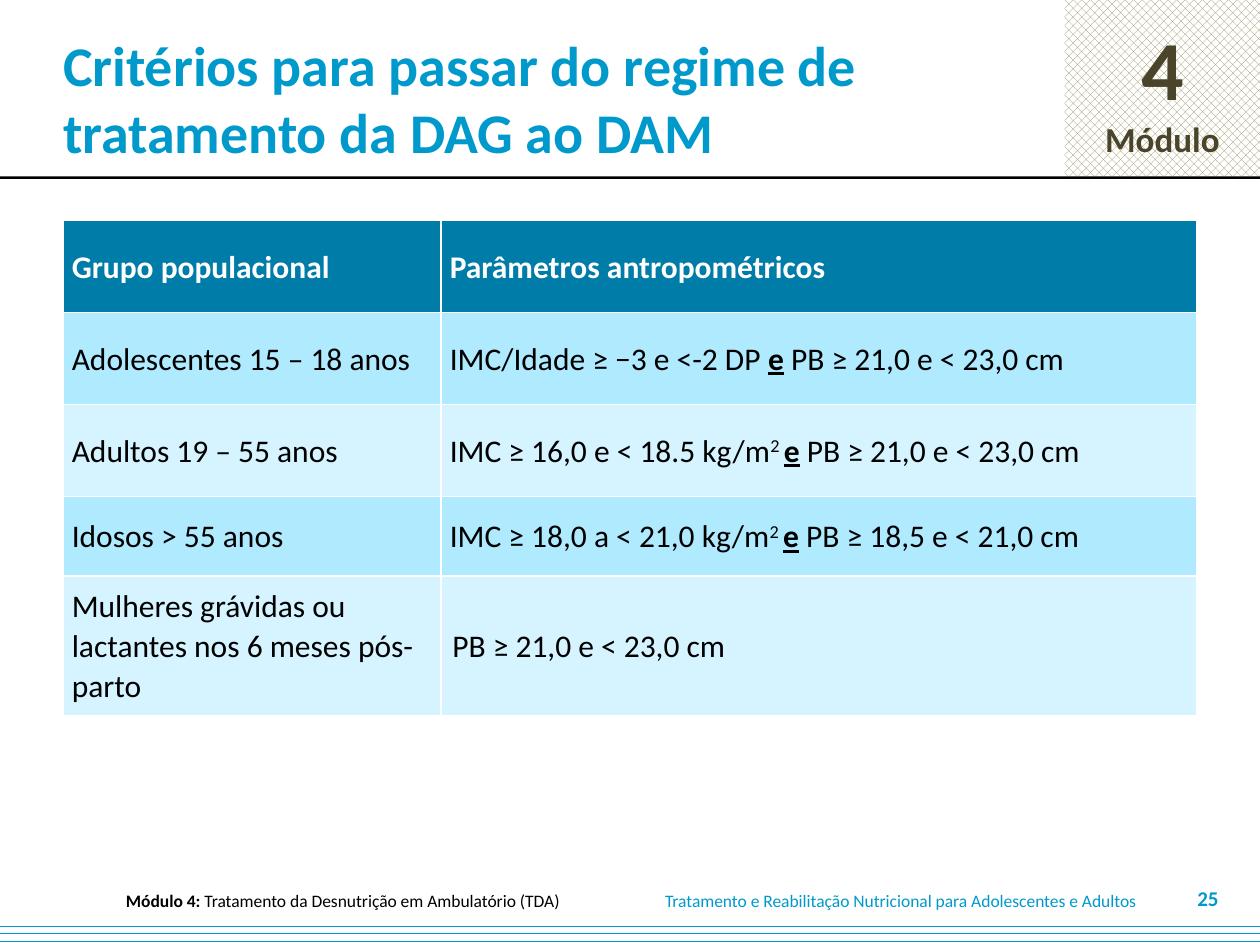
from lxml.etree import SubElement
from pptx import Presentation
from pptx.dml.color import RGBColor
from pptx.enum.dml import MSO_PATTERN
from pptx.enum.shapes import MSO_SHAPE
from pptx.enum.text import MSO_ANCHOR, MSO_AUTO_SIZE, PP_ALIGN
from pptx.oxml.ns import qn
from pptx.util import Inches, Pt

BLUE = RGBColor(0x00, 0x99, 0xCC)
DEEP = RGBColor(0x00, 0x7C, 0xA8)
SKY = RGBColor(0xAF, 0xEA, 0xFF)
PALE = RGBColor(0xD5, 0xF4, 0xFF)
TAN = RGBColor(0x94, 0x8A, 0x54)
BROWN = RGBColor(0x4A, 0x45, 0x2A)
BLACK = RGBColor(0, 0, 0)
WHITE = RGBColor(255, 255, 255)

LEFT, MID, RIGHT, JUST = (PP_ALIGN.LEFT, PP_ALIGN.CENTER,
                          PP_ALIGN.RIGHT, PP_ALIGN.JUSTIFY)
AND = ("e", {"bold": True, "underline": True})
SQUARE = ("2 ", {"raised": True})

ROWS = [
    (0.73, ["Grupo populacional"], ["Parâmetros antropométricos"]),
    (0.73, ["Adolescentes 15 – 18 anos"],
     ["IMC/Idade ≥ −3 e <-2 DP ", AND, " PB ≥ 21,0 e < 23,0 cm"]),
    (0.73, ["Adultos 19 – 55 anos"],
     ["IMC ≥ 16,0 e < 18.5 kg/m", SQUARE, AND, " PB ≥ 21,0 e < 23,0 cm"]),
    (0.63, ["Idosos > 55 anos"],
     ["IMC ≥ 18,0 a < 21,0 kg/m", SQUARE, AND, " PB ≥ 18,5 e < 21,0 cm"]),
    (1.11, ["Mulheres grávidas ou lactantes nos 6 meses pós-parto"],
     ["PB ≥ 21,0 e < 23,0 cm"]),
]


class Deck:
    def __init__(self, font):
        self.font = font
        self.prs = Presentation()
        self.prs.slide_width, self.prs.slide_height = Inches(10), Inches(7.5)
        self.slide = self.prs.slides.add_slide(self.prs.slide_layouts[5])

    def text(self, para, parts, size, color, align=LEFT, bold=False):
        """Fill a paragraph; a part is a text or a (text, format) pair."""
        para.alignment = align
        for part in parts:
            words, extra = (part, {}) if isinstance(part, str) else part
            run = para.add_run()
            run.text = words
            look = {"name": self.font, "size": Pt(size), "bold": bold} | extra
            if look.pop("raised", False):
                run._r.get_or_add_rPr().set("baseline", "30000")
            for key, value in look.items():
                setattr(run.font, key, value)
            run.font.color.rgb = color

    def rect(self, box, color, pattern=None):
        shape = self.slide.shapes.add_shape(
            MSO_SHAPE.RECTANGLE, *map(Inches, box))
        shape.shadow.inherit = False
        shape.line.fill.background()
        if pattern is None:
            shape.fill.solid()
            shape.fill.fore_color.rgb = color
        else:
            shape.fill.patterned()
            shape.fill.pattern = pattern
            shape.fill.fore_color.rgb = color
            shape.fill.back_color.rgb = WHITE
        return shape

    def badge(self, box, lines):
        frame = self.rect(box, TAN, MSO_PATTERN.PERCENT_50).text_frame
        frame.vertical_anchor = MSO_ANCHOR.MIDDLE
        for i, (words, size) in enumerate(lines):
            para = frame.add_paragraph() if i else frame.paragraphs[0]
            self.text(para, [words], size, BROWN, MID, True)

    def title(self, box, words):
        shape = self.slide.shapes.title
        shape.left, shape.top, shape.width, shape.height = map(Inches, box)
        frame = shape.text_frame
        look = {"margin_left": Inches(0.5), "word_wrap": True,
                "vertical_anchor": MSO_ANCHOR.MIDDLE,
                "auto_size": MSO_AUTO_SIZE.NONE}
        for key, value in look.items():
            setattr(frame, key, value)
        self.text(frame.paragraphs[0], [words], 32, BLUE, bold=True)

    def label(self, box, parts, *style):
        frame = self.slide.shapes.add_textbox(*map(Inches, box)).text_frame
        frame.word_wrap = True
        frame.vertical_anchor = MSO_ANCHOR.MIDDLE
        self.text(frame.paragraphs[0], parts, *style)

    def edges(self, cell):
        """Draw thin white borders; they must precede the cell's fill."""
        props = cell._tc.get_or_add_tcPr()
        for i, side in enumerate(("lnL", "lnR", "lnT", "lnB")):
            line = SubElement(props, qn("a:" + side), w=str(Pt(1)))
            fill = SubElement(line, qn("a:solidFill"))
            SubElement(fill, qn("a:srgbClr"), val=str(WHITE))
            props.insert(i, line)

    def table(self, box, widths, rows):
        grid = self.slide.shapes.add_table(
            len(rows), len(widths), *map(Inches, box)).table
        for col, width in zip(grid.columns, widths):
            col.width = Inches(width)
        for r, (height, *texts) in enumerate(rows):
            grid.rows[r].height = Inches(height)
            head = r == 0
            fill = DEEP if head else (PALE, SKY)[r % 2]
            for c, parts in enumerate(texts):
                cell = grid.cell(r, c)
                look = {"margin_left": Inches(0.07),
                        "margin_right": Inches(0.07),
                        "margin_top": 0, "margin_bottom": 0,
                        "vertical_anchor": MSO_ANCHOR.MIDDLE}
                for key, value in look.items():
                    setattr(cell, key, value)
                cell.fill.solid()
                cell.fill.fore_color.rgb = fill
                self.edges(cell)
                para = cell.text_frame.paragraphs[0]
                para.line_spacing = 1.05
                self.text(para, parts, 18, WHITE if head else BLACK,
                          JUST if head or c else LEFT, head)
        last = grid.cell(len(rows) - 1, 1).text_frame.paragraphs[0]
        last._p.get_or_add_pPr().set("marL", str(Inches(0.02)))


def main():
    deck = Deck("Calibri")
    deck.badge((8.45, 0, 1.55, 1.4), [("4", 48), ("Módulo", 20)])
    deck.rect((0, 1.4, 10, 0.02), BLACK)
    deck.rect((0, 7.29, 10, 0.21), BLUE, MSO_PATTERN.DASHED_HORIZONTAL)
    deck.label((5.18, 7.05, 4.05, 0.2),
               ["Tratamento e Reabilitação Nutricional para "
                "Adolescentes e Adultos"], 10, BLUE)
    deck.label((0.29, 7.05, 4.86, 0.2),
               [("Módulo 4: ", {"bold": True}),
                "Tratamento da Desnutrição em Ambulatório (TDA)"],
               10, BLACK, MID)
    deck.title((0, 0, 8.58, 1.55),
               "Critérios para passar do regime de tratamento da DAG ao DAM")
    deck.label((9.27, 7, 0.5, 0.25), ["25"], 12, BLUE, RIGHT, True)
    deck.table((0.5, 1.75, 9, 3.94), (3, 6), ROWS)
    deck.prs.save("out.pptx")


if __name__ == "__main__":
    main()
